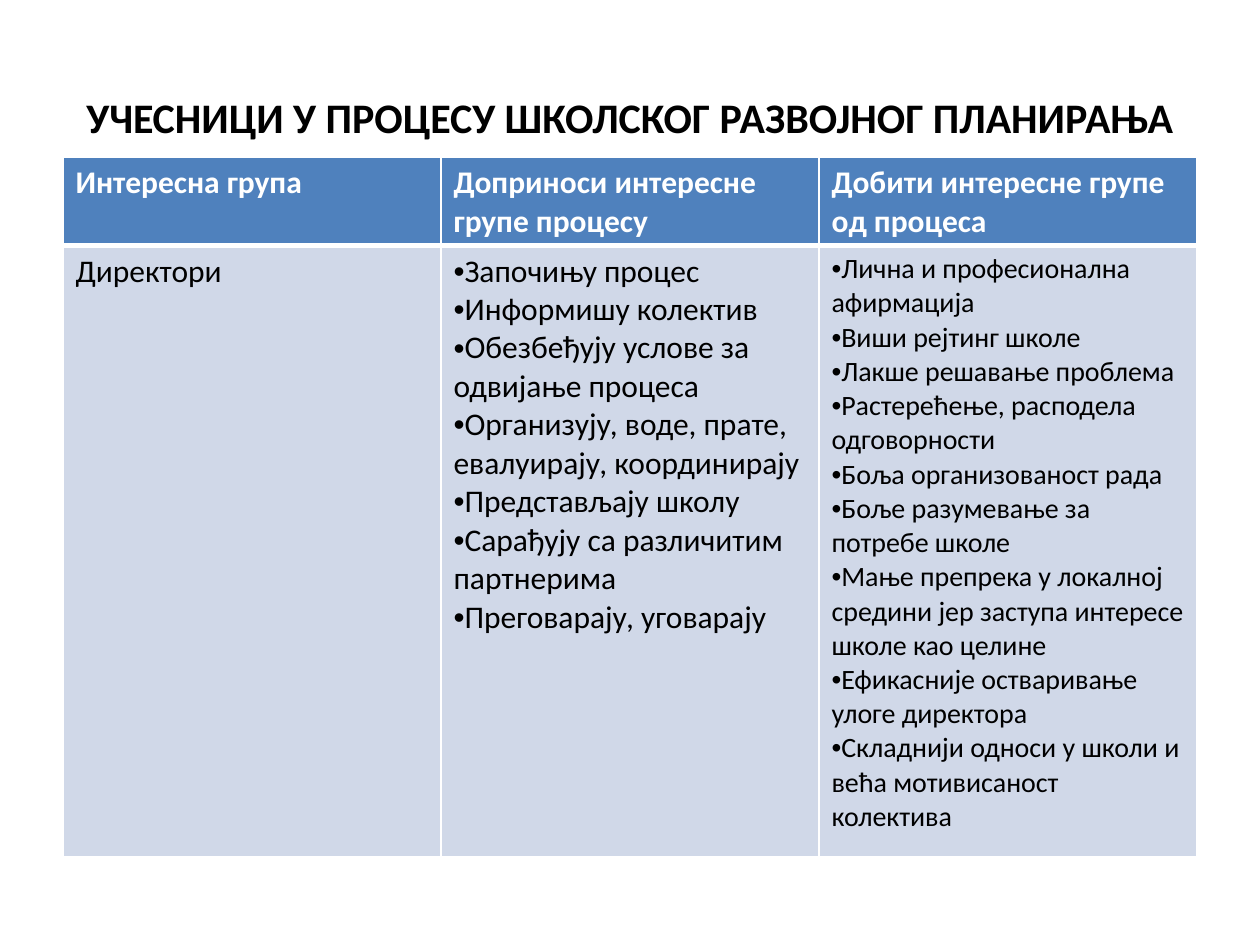
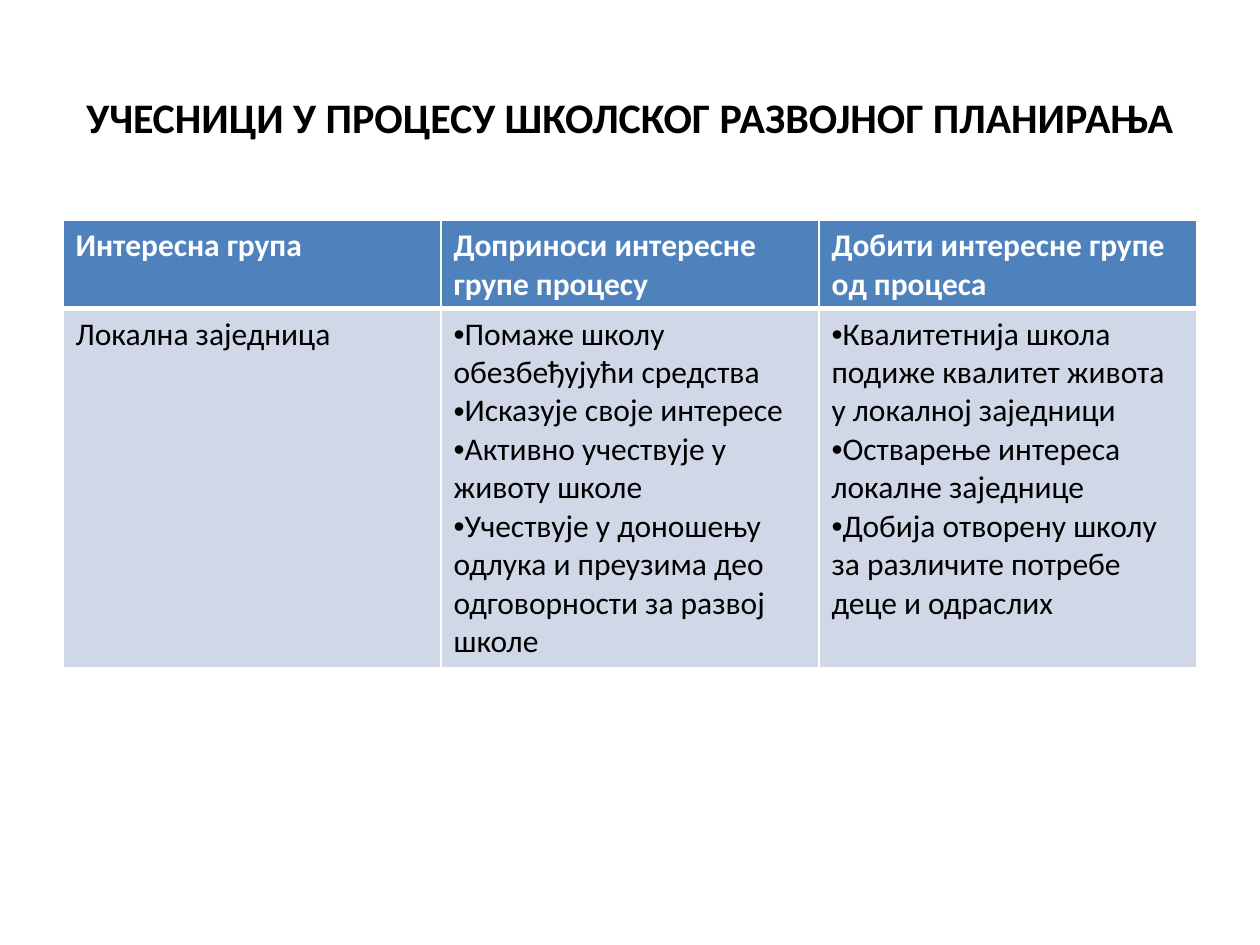
from lxml import etree
from pptx import Presentation, util as u
from pptx.dml.color import RGBColor
from pptx.enum import text
from pptx.oxml import ns

TITLE = "УЧЕСНИЦИ У ПРОЦЕСУ ШКОЛСКОГ РАЗВОЈНОГ ПЛАНИРАЊА"
HEADERS = ["Интересна група", "Доприноси интересне групе процесу",
           "Добити интересне групе од процеса"]
SLIDES = [
    {"group": "Директори", "top": 1.25, "body_height": 4.85, "sizes": (18, 18, 16),
     "contributions": [
         "Започињу процес",
         "Информишу колектив",
         "Обезбеђују услове за одвијање процеса",
         "Организују, воде, прате, евалуирају, координирају",
         "Представљају школу",
         "Сарађују са различитим партнерима",
         "Преговарају, уговарају"],
     "benefits": [
         "Лична и професионална афирмација",
         "Виши рејтинг школе",
         "Лакше решавање проблема",
         "Растерећење, расподела одговорности",
         "Боља организованост рада",
         "Боље разумевање за потребе школе",
         "Мање препрека у локалној средини јер заступа интересе школе као целине",
         "Ефикасније остваривање улоге директора",
         "Складнији односи у школи и већа мотивисаност колектива"]},
    {"group": "Локална заједница", "top": 1.75, "body_height": 2.85, "sizes": (18, 18, 18),
     "contributions": [
         "Помаже школу обезбеђујући средства",
         "Исказује своје интересе",
         "Активно учествује у животу школе",
         "Учествује у доношењу одлука и преузима део одговорности за развој школе"],
     "benefits": [
         "Квалитетнија школа подиже квалитет живота у локалној заједници",
         "Остварење интереса локалне заједнице",
         "Добија отворену школу за различите потребе деце и одраслих"]},
]

BLACK = RGBColor(0x00, 0x00, 0x00)
WHITE = RGBColor(0xFF, 0xFF, 0xFF)
BLUE = RGBColor(0x4F, 0x81, 0xBD)
PALE = RGBColor(0xD0, 0xD8, 0xE8)

WIDTH, HEIGHT, MARGIN = 10, 7.5, 0.5
CONTENT = WIDTH - 2 * MARGIN
HEADER_HEIGHT = 0.7
TITLE_STYLE = {"size": u.Pt(24), "bold": True, "color": BLACK}
HEADER_STYLE = {"size": u.Pt(18), "bold": True, "color": WHITE}
BODY_STYLE = {"bold": False, "color": BLACK}


def write(p, words, style):
    r = p.add_run()
    r.text = words
    r.font.name = "Calibri"
    for name, value in style.items():
        if name == "color":
            r.font.color.rgb = value
        else:
            setattr(r.font, name, value)


def add_bullet(p):
    """Give the paragraph a dot that runs in line with its text."""
    pPr = p._p.get_or_add_pPr()
    pPr.set("marL", "0")
    pPr.set("indent", "0")
    etree.SubElement(pPr, ns.qn("a:buFont"), typeface="Arial")
    etree.SubElement(pPr, ns.qn("a:buChar"), char="•")


def set_borders(cell, widths):
    tcPr = cell._tc.get_or_add_tcPr()
    for i, (side, width) in enumerate(widths.items()):
        ln = etree.Element(ns.qn(f"a:ln{side}"), w=str(u.Pt(width)))
        fill = etree.SubElement(ln, ns.qn("a:solidFill"))
        etree.SubElement(fill, ns.qn("a:srgbClr"), val=str(WHITE))
        tcPr.insert(i, ln)


def fill_cell(cell, lines, style, fill, borders, bulleted=False):
    cell.fill.solid()
    cell.fill.fore_color.rgb = fill
    set_borders(cell, borders)
    tf = cell.text_frame
    for i, line in enumerate(lines):
        p = tf.add_paragraph() if i else tf.paragraphs[0]
        if bulleted:
            add_bullet(p)
        write(p, line, style)


def add_title(s):
    box = s.shapes.add_textbox(*map(u.Inches, (MARGIN, 0.3, CONTENT, 1.25)))
    tf = box.text_frame
    tf.word_wrap = True
    tf.vertical_anchor = text.MSO_ANCHOR.MIDDLE
    p = tf.paragraphs[0]
    p.alignment = text.PP_ALIGN.CENTER
    write(p, TITLE, TITLE_STYLE)


def add_group_table(s, data):
    heights = (HEADER_HEIGHT, data["body_height"])
    area = (MARGIN, data["top"], CONTENT, sum(heights))
    table = s.shapes.add_table(2, len(HEADERS), *map(u.Inches, area)).table
    for row, height in zip(table.rows, heights):
        row.height = u.Inches(height)
    columns = [[data["group"]], data["contributions"], data["benefits"]]
    for i, (header, lines, size) in enumerate(zip(HEADERS, columns, data["sizes"])):
        table.columns[i].width = u.Inches(CONTENT / len(HEADERS))
        fill_cell(table.cell(0, i), [header], HEADER_STYLE, BLUE,
                  {"L": 1, "R": 1, "T": 1, "B": 3})
        fill_cell(table.cell(1, i), lines, {**BODY_STYLE, "size": u.Pt(size)}, PALE,
                  {"L": 1, "R": 1, "T": 3, "B": 1}, bulleted=i > 0)


def main():
    prs = Presentation()
    prs.slide_width, prs.slide_height = u.Inches(WIDTH), u.Inches(HEIGHT)
    for data in SLIDES:
        s = prs.slides.add_slide(prs.slide_layouts[6])
        add_title(s)
        add_group_table(s, data)
    prs.save("out.pptx")


if __name__ == "__main__":
    main()
